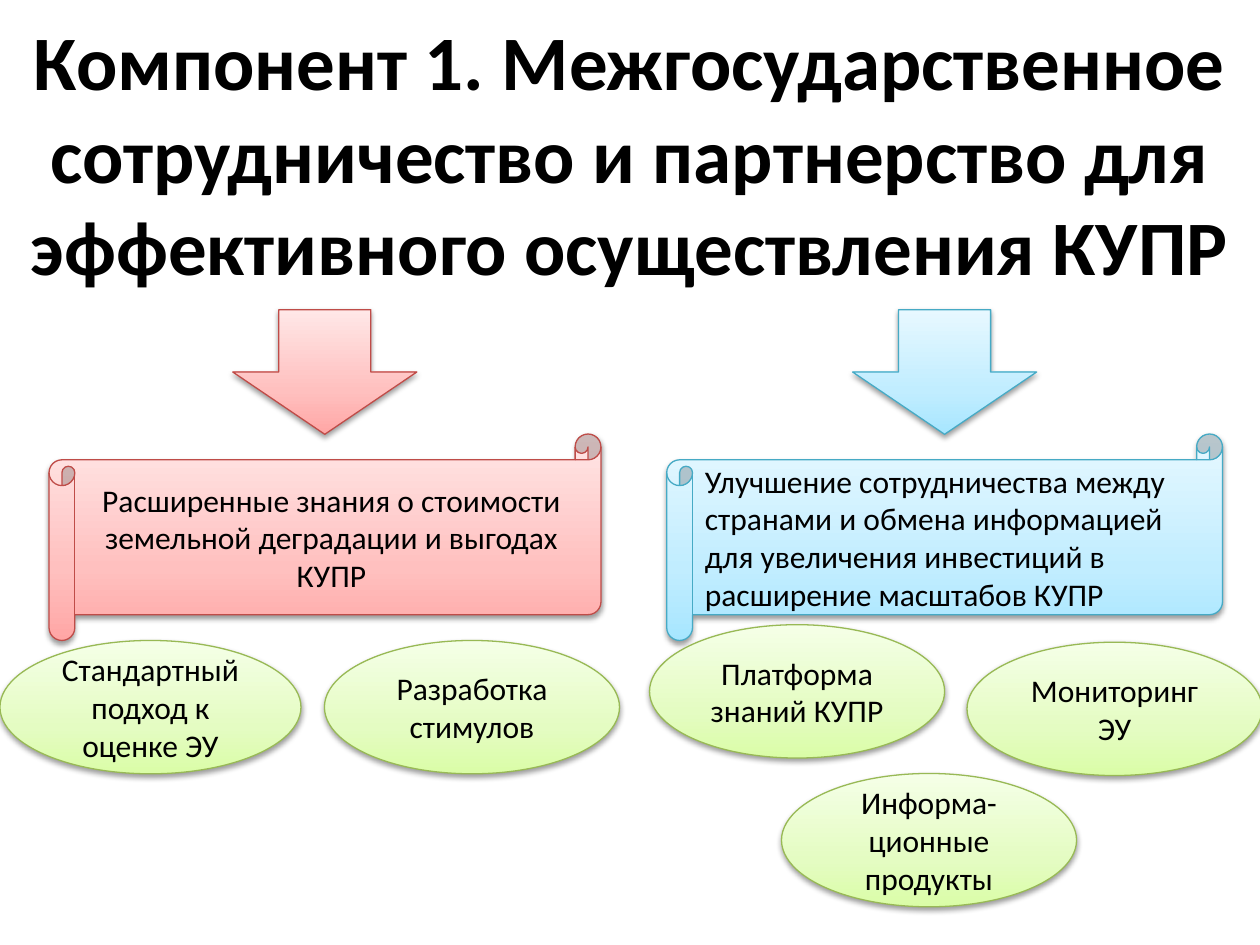
from copy import deepcopy

from lxml import etree
from pptx import Presentation
from pptx.dml.color import RGBColor
from pptx.enum.shapes import MSO_SHAPE
from pptx.enum.text import MSO_ANCHOR, MSO_AUTO_SIZE, PP_ALIGN
from pptx.oxml.ns import qn
from pptx.util import Pt

ARROW, SCROLL, OVAL = MSO_SHAPE.DOWN_ARROW, MSO_SHAPE.HORIZONTAL_SCROLL, MSO_SHAPE.OVAL
LEFT, CENTER = PP_ALIGN.LEFT, PP_ALIGN.CENTER
MIDDLE = MSO_ANCHOR.MIDDLE
NO_AUTOFIT = MSO_AUTO_SIZE.NONE

BLACK = RGBColor(0x00, 0x00, 0x00)
# Each palette: outline, then the gradient from bottom to top
RED = (RGBColor(0xBF, 0x4C, 0x48), RGBColor(0xFF, 0xA6, 0xA5),
       RGBColor(0xFF, 0xC0, 0xBF), RGBColor(0xFF, 0xE7, 0xE7))
BLUE = (RGBColor(0x46, 0xAA, 0xC5), RGBColor(0xA7, 0xE6, 0xFF),
        RGBColor(0xC1, 0xED, 0xFF), RGBColor(0xE7, 0xF8, 0xFF))
GREEN = (RGBColor(0x98, 0xB9, 0x55), RGBColor(0xDA, 0xFD, 0xA7),
         RGBColor(0xE4, 0xFC, 0xC2), RGBColor(0xF5, 0xFF, 0xE7))
GRADIENT_POSITIONS = (0, 0.35, 1)

TITLE = ("Компонент 1. Межгосударственное сотрудничество и партнерство "
         "для эффективного осуществления КУПР")
TITLE_FONT = {"name": "Calibri", "size": Pt(44), "bold": True}
BODY_FONT = {"name": "Calibri", "size": Pt(18), "bold": False}

ARROW_TOP, ARROW_SIZE = 177, (105.2, 71.2)
SCROLL_TOP, SCROLL_HEIGHT = 248, 118
OVAL_WIDTH, OVAL_HEIGHT = 168.6, 76.2

# Palette, arrow left, scroll left, scroll width, alignment, text
OUTCOMES = (
    (RED, 133, 28, 315.4, CENTER,
     "Расширенные знания о стоимости земельной деградации и выгодах КУПР"),
    (BLUE, 487.2, 381, 317.6, LEFT,
     "Улучшение сотрудничества между странами и обмена информацией "
     "для увеличения инвестиций в расширение масштабов КУПР"),
)
# Left, top, width, text
ACTIVITIES = (
    (0, 366, 172, "Стандартный подход к оценке ЭУ"),
    (185.4, 366, OVAL_WIDTH, "Разработка стимулов"),
    (371.2, 357, OVAL_WIDTH, "Платформа знаний КУПР"),
    (552.6, 367, OVAL_WIDTH, "Мониторинг ЭУ"),
    (446.6, 442, OVAL_WIDTH, "Информа-ционные продукты"),
)


def write_text(shape, text, font_format, align):
    frame = shape.text_frame
    frame.word_wrap = True
    frame.auto_size = NO_AUTOFIT
    frame.vertical_anchor = MIDDLE
    paragraph = frame.paragraphs[0]
    paragraph.alignment = align
    run = paragraph.add_run()
    run.text = text
    run.font.color.rgb = BLACK
    for attribute, value in font_format.items():
        setattr(run.font, attribute, value)


def fill_gradient(shape, colors):
    """Apply a three-stop gradient running from the bottom to the top."""
    shape.fill.gradient()
    shape.fill.gradient_angle = 90
    stop_list = shape.element.spPr.find(".//" + qn("a:gsLst"))
    stop_list.append(deepcopy(stop_list[-1]))
    for stop, position, color in zip(shape.fill.gradient_stops, GRADIENT_POSITIONS, colors):
        stop.position = position
        stop.color.rgb = color


def add_soft_shadow(shape):
    shape.shadow.inherit = False
    effects = shape.element.spPr.find(qn("a:effectLst"))
    shadow = etree.SubElement(effects, qn("a:outerShdw"), blurRad="40000",
                              dist="20000", dir="5400000", rotWithShape="0")
    color = etree.SubElement(shadow, qn("a:srgbClr"), val="000000")
    etree.SubElement(color, qn("a:alpha"), val="38000")


def add_gradient_shape(slide, kind, box, palette, text="", align=CENTER):
    shape = slide.shapes.add_shape(kind, *map(Pt, box))
    outline, *gradient = palette
    fill_gradient(shape, gradient)
    shape.line.color.rgb = outline
    shape.line.width = Pt(0.75)
    add_soft_shadow(shape)
    if text:
        write_text(shape, text, BODY_FONT, align)


def add_title(slide):
    title = slide.shapes.title
    box = {"left": 0, "top": 42, "width": 720, "height": 90}
    for attribute, value in box.items():
        setattr(title, attribute, Pt(value))
    write_text(title, TITLE, TITLE_FONT, CENTER)


def main():
    presentation = Presentation()
    presentation.slide_width, presentation.slide_height = Pt(720), Pt(540)
    slide = presentation.slides.add_slide(presentation.slide_layouts[5])

    add_title(slide)
    for palette, arrow_left, scroll_left, scroll_width, align, text in OUTCOMES:
        add_gradient_shape(slide, ARROW, (arrow_left, ARROW_TOP, *ARROW_SIZE), palette)
        scroll_box = (scroll_left, SCROLL_TOP, scroll_width, SCROLL_HEIGHT)
        add_gradient_shape(slide, SCROLL, scroll_box, palette, text, align)
    for left, top, width, text in ACTIVITIES:
        add_gradient_shape(slide, OVAL, (left, top, width, OVAL_HEIGHT), GREEN, text)

    presentation.save("out.pptx")


if __name__ == "__main__":
    main()
